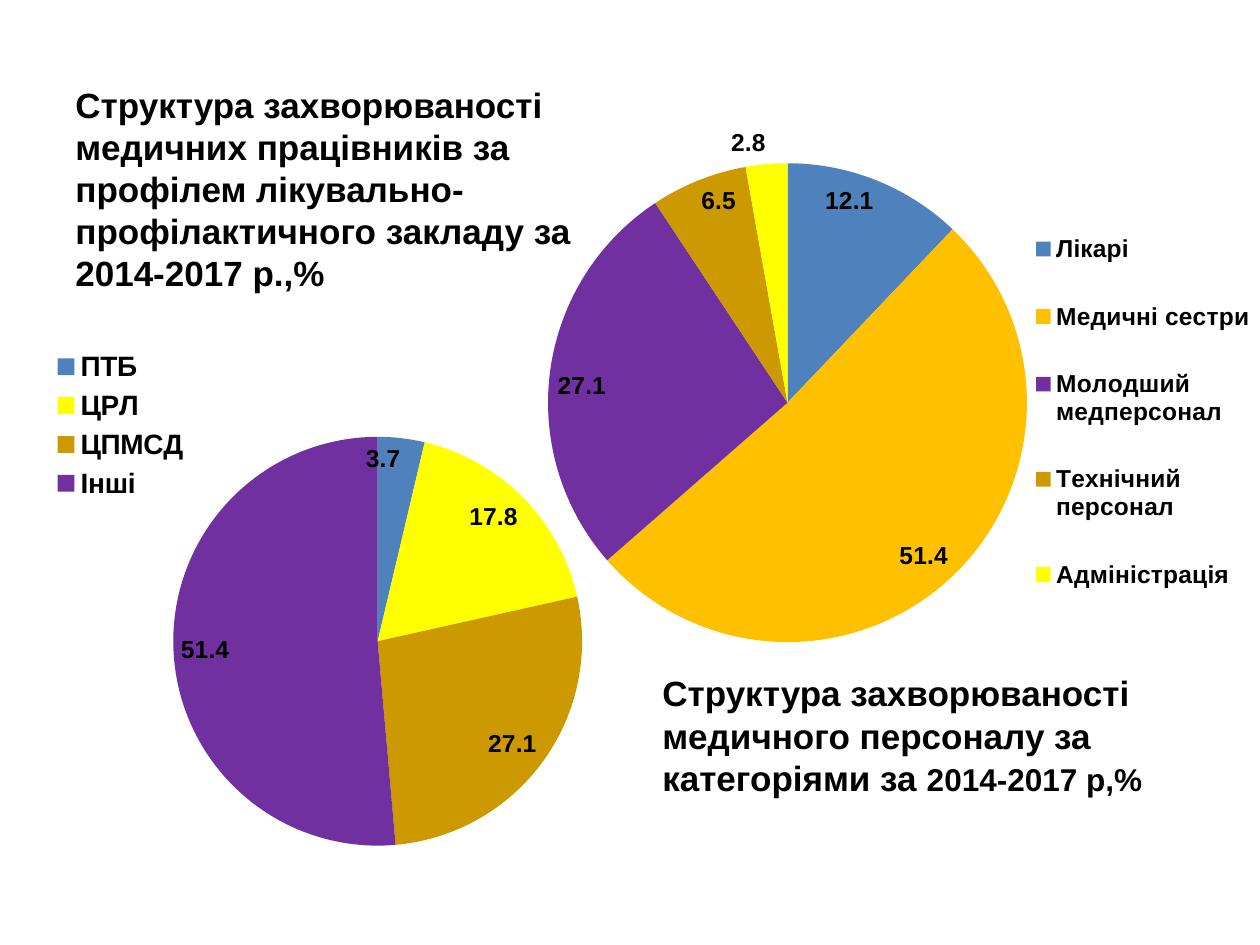
from lxml import etree
from pptx import Presentation
from pptx.chart.data import CategoryChartData
from pptx.dml.color import RGBColor
from pptx.enum.chart import XL_CHART_TYPE, XL_LABEL_POSITION as LabelPos, XL_LEGEND_POSITION
from pptx.enum.text import MSO_ANCHOR
from pptx.oxml import parse_xml
from pptx.oxml.ns import nsdecls, qn
from pptx.util import Emu, Pt

COLORS = {
    "text": "000000",
    "blue": "4F81BD",
    "yellow": "FFFF00",
    "amber": "FFC000",
    "ochre": "CC9900",
    "purple": "7030A0",
}


def px(value):
    return Emu(round(value * 914400 / 126))


def rgb(name):
    return RGBColor.from_string(COLORS[name])


def style_font(font, size):
    font.name = "Arial"
    font.size = Pt(size)
    font.bold = True
    font.color.rgb = rgb("text")


def add_heading(page, area, runs, bottom=6):
    box = page.shapes.add_textbox(*map(px, area))
    frame = box.text_frame
    frame.word_wrap = True
    frame.vertical_anchor = MSO_ANCHOR.BOTTOM
    frame.margin_bottom = px(bottom)
    para = frame.paragraphs[0]
    for text, size in runs:
        span = para.add_run()
        span.text = text
        style_font(span.font, size)


def set_layout(parent, previous, chart_area, area, inner=False):
    old = parent.find(qn("c:layout"))
    if old is not None:
        parent.remove(old)
    left, top, width, height = chart_area
    fractions = {
        "x": (area[0] - left) / width,
        "y": (area[1] - top) / height,
        "w": area[2] / width,
        "h": area[3] / height,
    }
    layout = parse_xml(f"<c:layout {nsdecls('c')}><c:manualLayout/></c:layout>")
    manual = layout[0]
    if inner:
        etree.SubElement(manual, qn("c:layoutTarget")).set("val", "inner")
    for axis in "xy":
        etree.SubElement(manual, qn(f"c:{axis}Mode")).set("val", "edge")
    for key, value in fractions.items():
        etree.SubElement(manual, qn(f"c:{key}")).set("val", f"{value:.3f}")
    if previous is None:
        parent.insert(0, layout)
    else:
        previous.addnext(layout)


def add_pie(page, area, pie_area, legend_area, legend_size, slices, outside=()):
    data = CategoryChartData()
    data.categories = [name for name, value, color in slices]
    data.add_series("Series 1", [value for name, value, color in slices])
    chart = page.shapes.add_chart(XL_CHART_TYPE.PIE, *map(px, area), data).chart
    chart.has_title = False
    chart.has_legend = True
    legend = chart.legend
    legend.position = XL_LEGEND_POSITION.RIGHT
    legend.include_in_layout = False
    style_font(legend.font, legend_size)

    plot = chart.plots[0]
    plot.vary_by_categories = True
    plot.has_data_labels = True
    labels = plot.data_labels
    labels.show_value = True
    labels.show_percentage = False
    labels.position = LabelPos.INSIDE_END
    style_font(labels.font, 14)

    for index, (name, value, color) in enumerate(slices):
        point = plot.series[0].points[index]
        point.format.fill.solid()
        point.format.fill.fore_color.rgb = rgb(color)
        point.format.line.fill.background()
        label = point.data_label
        style_font(label.font, 14)
        label.position = LabelPos.OUTSIDE_END if name in outside else LabelPos.INSIDE_END

    plot_area = chart.element.find(".//" + qn("c:plotArea"))
    set_layout(plot_area, None, area, pie_area, inner=True)
    legend_node = chart.element.find(".//" + qn("c:legend"))
    set_layout(legend_node, legend_node.find(qn("c:legendPos")), area, legend_area)


def main():
    deck = Presentation()
    deck.slide_width, deck.slide_height = px(1260), px(945)
    page = deck.slides.add_slide(deck.slide_layouts[6])

    add_heading(page, (63, 66, 577, 234), [
        ("Структура захворюваності медичних працівників за профілем "
         "лікувально-профілактичного закладу за 2014-2017 р.,%", 20),
    ])
    add_pie(page, (15, 300, 665, 590), (173, 437, 409, 409), (50, 343, 140, 164), 16, [
        ("ПТБ", 3.7, "blue"),
        ("ЦРЛ", 17.8, "yellow"),
        ("ЦПМСД", 27.1, "ochre"),
        ("Інші", 51.4, "purple"),
    ])
    add_heading(page, (650, 621, 557, 234), [
        ("Структура захворюваності медичного персоналу за категоріями за ", 20),
        ("2014-2017 р,%", 18),
    ], bottom=57)
    add_pie(page, (530, 96, 753, 580), (548, 163, 479, 479), (1030, 195, 226, 433), 14, [
        ("Лікарі", 12.1, "blue"),
        ("Медичні сестри", 51.4, "amber"),
        ("Молодший медперсонал", 27.1, "purple"),
        ("Технічний персонал", 6.5, "ochre"),
        ("Адміністрація", 2.8, "yellow"),
    ], outside=("Адміністрація",))

    deck.save("out.pptx")


if __name__ == "__main__":
    main()
